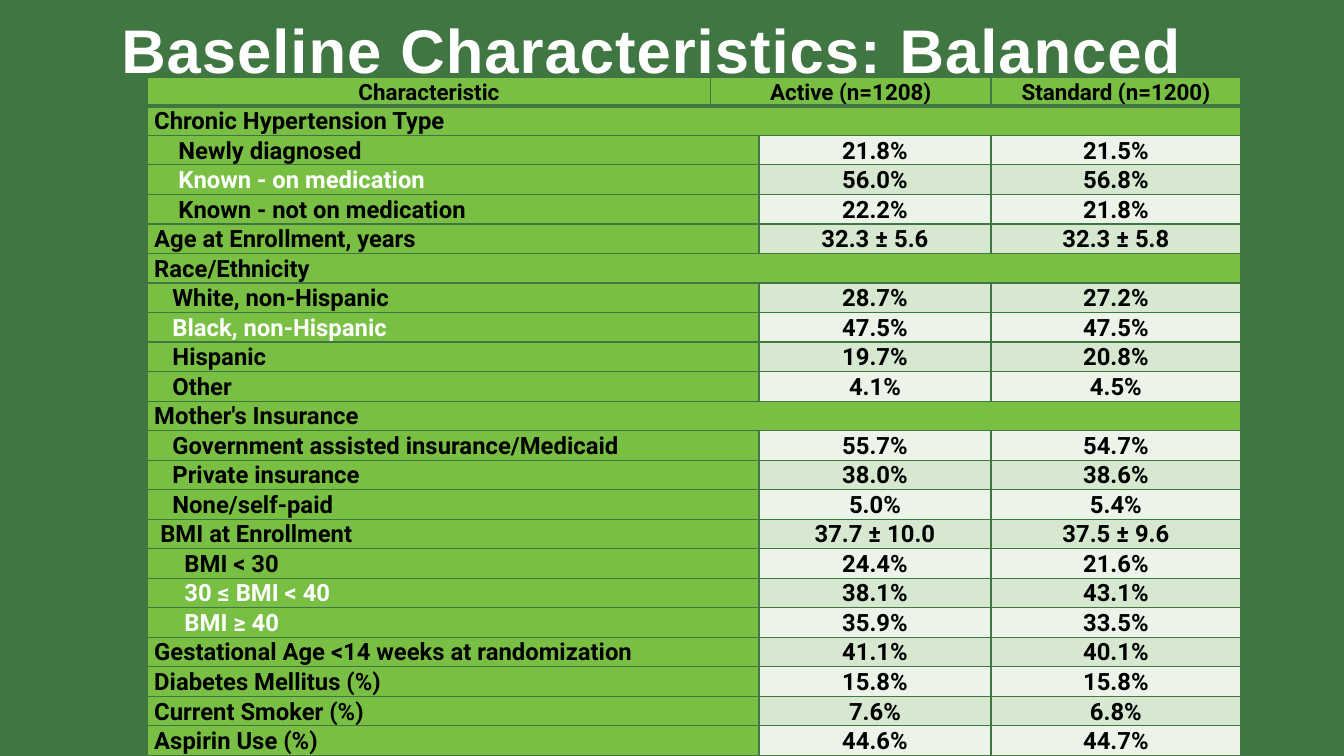
from lxml import etree
from pptx import Presentation
from pptx.dml.color import RGBColor
from pptx.enum.text import MSO_ANCHOR, PP_ALIGN
from pptx.oxml.ns import qn
from pptx.util import Inches, Pt

CENTER, LEFT = PP_ALIGN.CENTER, PP_ALIGN.LEFT
MIDDLE, BOTTOM = MSO_ANCHOR.MIDDLE, MSO_ANCHOR.BOTTOM
FOREST = RGBColor(0x40, 0x76, 0x42)
LEAF = RGBColor(0x78, 0xBF, 0x43)
PALE = RGBColor(0xEC, 0xF4, 0xE9)
MINT = RGBColor(0xD6, 0xE8, 0xCF)
WHITE = RGBColor(0xFF, 0xFF, 0xFF)
BLACK = RGBColor(0, 0, 0)

HEADINGS = ("Characteristic", "Active (n=1208)", "Standard (n=1200)")
COLUMN_WIDTHS = (5.59, 0.15, 2.3, 2.48)
HEADER_HEIGHT = 0.28
CELL_PADDING = 0.07
INDENT_STEP = 0.06
CHARACTERISTICS = (
    (0, "Chronic Hypertension Type"),
    (4, "Newly diagnosed", "21.8%", "21.5%"),
    (4, "Known - on medication", "56.0%", "56.8%"),
    (4, "Known - not on medication", "22.2%", "21.8%"),
    (0, "Age at Enrollment, years", "32.3 ± 5.6", "32.3 ± 5.8"),
    (0, "Race/Ethnicity"),
    (3, "White, non-Hispanic", "28.7%", "27.2%"),
    (3, "Black, non-Hispanic", "47.5%", "47.5%"),
    (3, "Hispanic", "19.7%", "20.8%"),
    (3, "Other", "4.1%", "4.5%"),
    (0, "Mother's Insurance"),
    (3, "Government assisted insurance/Medicaid", "55.7%", "54.7%"),
    (3, "Private insurance", "38.0%", "38.6%"),
    (3, "None/self-paid", "5.0%", "5.4%"),
    (1, "BMI at Enrollment", "37.7 ± 10.0", "37.5 ± 9.6"),
    (5, "BMI < 30", "24.4%", "21.6%"),
    (5, "30 ≤ BMI < 40", "38.1%", "43.1%"),
    (5, "BMI ≥ 40", "35.9%", "33.5%"),
    (0, "Gestational Age <14 weeks at randomization", "41.1%", "40.1%"),
    (0, "Diabetes Mellitus (%)", "15.8%", "15.8%"),
    (0, "Current Smoker (%)", "7.6%", "6.8%"),
    (0, "Aspirin Use (%)", "44.6%", "44.7%"),
)
HIGHLIGHTED = {"Known - on medication", "Black, non-Hispanic",
               "30 ≤ BMI < 40", "BMI ≥ 40"}


def style_font(font, name, size, color):
    """Apply a bold typeface, size and colour."""
    font.name, font.size, font.bold = name, Pt(size), True
    font.color.rgb = color


def add_title(slide, left, top, width, height):
    """Place the slide title in the given box."""
    title = slide.shapes.title
    title.left, title.top = Inches(left), Inches(top)
    title.width, title.height = Inches(width), Inches(height)
    frame = title.text_frame
    frame.vertical_anchor = MIDDLE
    frame.word_wrap = True
    heading = frame.paragraphs[0]
    heading.alignment = CENTER
    run = heading.add_run()
    run.text = "Baseline Characteristics: Balanced "
    style_font(heading.font, "Arial", 44, WHITE)
    run.font._element.set("spc", "70")


def draw_borders(cell, bottom_width):
    """Outline a cell in the background green."""
    properties = cell._tc.get_or_add_tcPr()
    for side, width in (("L", 1), ("R", 1), ("T", 1), ("B", bottom_width)):
        line = etree.SubElement(properties, qn(f"a:ln{side}"), w=str(Pt(width)))
        fill = etree.SubElement(line, qn("a:solidFill"))
        etree.SubElement(fill, qn("a:srgbClr"), val=str(FOREST))


def fill_cell(cell, text, fill, size=17, color=BLACK, align=CENTER, indent=0):
    """Write one table cell and colour it."""
    cell.fill.solid()
    cell.fill.fore_color.rgb = fill
    cell.vertical_anchor = BOTTOM
    cell.margin_left = Inches(CELL_PADDING + indent * INDENT_STEP)
    cell.margin_right = Inches(CELL_PADDING)
    cell.margin_top = cell.margin_bottom = 0
    entry = cell.text_frame.paragraphs[0]
    entry.text = text
    entry.alignment = align
    style_font(entry.font, "Roboto", size, color)


def add_characteristics(slide, left, top, width, height):
    """Build the baseline table in the given box."""
    table = slide.shapes.add_table(
        len(CHARACTERISTICS) + 1, len(COLUMN_WIDTHS),
        Inches(left), Inches(top), Inches(width), Inches(height)).table
    table.horz_banding = False
    for column, column_width in zip(table.columns, COLUMN_WIDTHS):
        column.width = Inches(column_width)
    body_height = (height - HEADER_HEIGHT) / len(CHARACTERISTICS)
    for index, row in enumerate(table.rows):
        row.height = Inches(body_height if index else HEADER_HEIGHT)
        for cell in row.cells:
            draw_borders(cell, 1 if index else 3)

    table.cell(0, 1).merge(table.cell(0, 2))
    for column, heading in zip((0, 1, 3), HEADINGS):
        fill_cell(table.cell(0, column), heading, LEAF, size=16)

    for index, (indent, label, *values) in enumerate(CHARACTERISTICS, 1):
        label_cell = table.cell(index, 0)
        label_cell.merge(table.cell(index, 1 if values else 3))
        fill_cell(label_cell, label, LEAF, align=LEFT, indent=indent,
                  color=WHITE if label in HIGHLIGHTED else BLACK)
        for column, value in enumerate(values, 2):
            fill_cell(table.cell(index, column), value, MINT if index % 2 else PALE)


def main():
    """Create and save the slide."""
    deck = Presentation()
    deck.slide_width, deck.slide_height = Inches(13.33), Inches(7.5)
    slide = deck.slides.add_slide(deck.slide_layouts[5])
    slide.background.fill.solid()
    slide.background.fill.fore_color.rgb = FOREST
    add_title(slide, 1.03, 0, 11.05, 0.96)
    add_characteristics(slide, 1.46, 0.77, 10.53, 6.73)
    deck.save("out.pptx")


if __name__ == "__main__":
    main()
